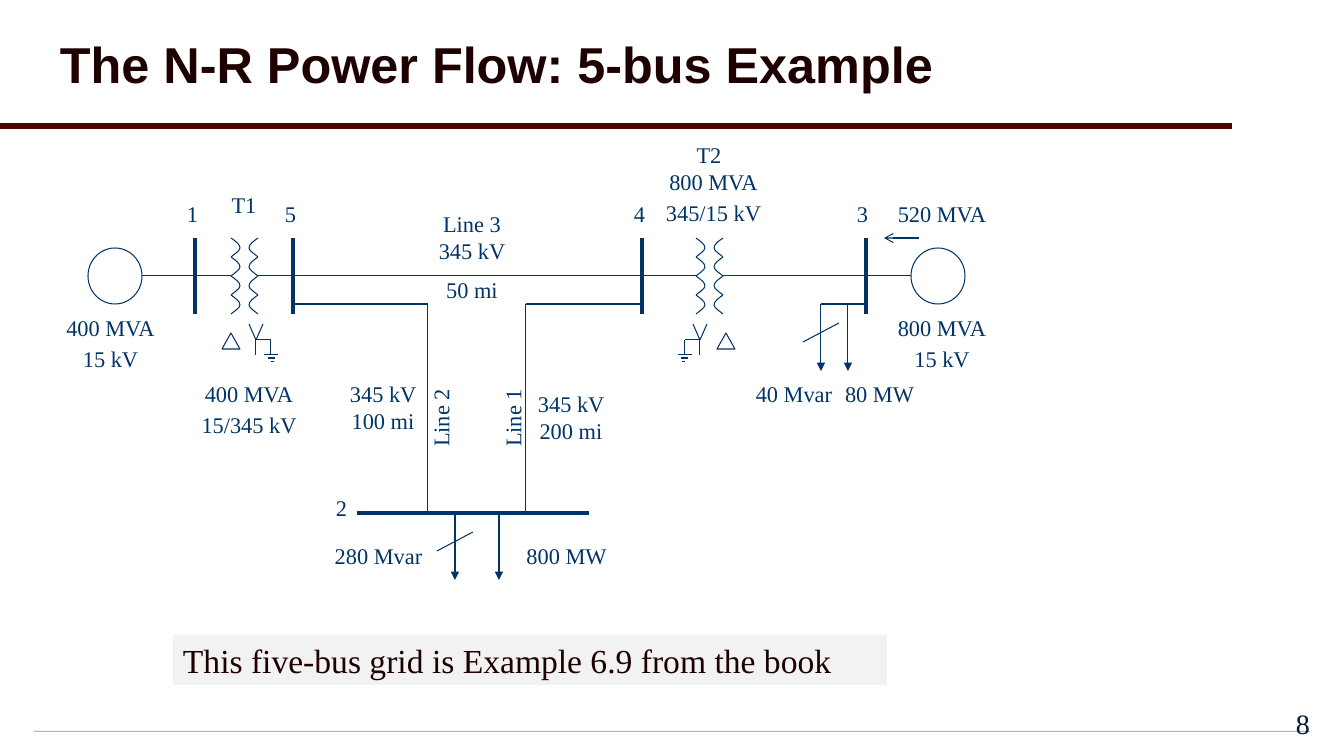
from dataclasses import dataclass

import pptx
import pptx.dml.color
import pptx.enum.shapes
import pptx.enum.text
import pptx.oxml
import pptx.oxml.ns
import pptx.shapes.autoshape
import pptx.slide
import pptx.util

RGBColor = pptx.dml.color.RGBColor
MSO_SHAPE = pptx.enum.shapes.MSO_SHAPE
PP_ALIGN = pptx.enum.text.PP_ALIGN
MSO_ANCHOR = pptx.enum.text.MSO_ANCHOR

PX_PER_INCH = 100.8
NAVY = RGBColor(0x00, 0x33, 0x66)
DARK_NAVY = RGBColor(0x00, 0x19, 0x33)
MAROON = RGBColor(0x50, 0x00, 0x00)
DARK_MAROON = RGBColor(0x1E, 0x00, 0x00)
LIGHT_GREY = RGBColor(0xF2, 0xF2, 0xF2)
RULE_GREY = RGBColor(0xB2, 0xB2, 0xB2)

WIRE_PT = 0.75
BUS_PT = 3
BUS_TOP, MAIN_Y, BRANCH_Y, BUS_BOTTOM = 238, 276, 304, 314
BUS_1, BUS_5, BUS_4, BUS_3 = 195, 293, 642, 866
BUS_2_Y = 513
HUMP_HEIGHT, HUMPS = 19, 4
HUMP_CURVE = ((0, 0), (4, 3), (9, 6), (9, 10), (9, 13), (2, 17), (0, HUMP_HEIGHT))


@dataclass(frozen=True)
class Wire:
    x1: int
    y1: int
    x2: int
    y2: int
    weight: float = WIRE_PT
    color: RGBColor = NAVY
    arrowhead: str = ""


@dataclass(frozen=True)
class Label:
    left: int
    top: int
    width: int
    height: int
    lines: tuple[str, ...]
    rotation: int = 0
    size: int = 16
    font: str = "Times New Roman"
    color: RGBColor = NAVY
    bold: bool = False
    align: PP_ALIGN = PP_ALIGN.CENTER
    anchor: MSO_ANCHOR = MSO_ANCHOR.TOP
    margins: tuple[int, int] = (0, 0)
    line_spacing: float = 1.0
    fill: RGBColor | None = None


@dataclass(frozen=True)
class Transformer:
    left_coil: int
    right_coil: int
    delta_left: int
    wye_x: int
    ground_side: int


@dataclass(frozen=True)
class Load:
    reactive_x: int
    real_x: int
    top: int


TRANSFORMERS = (
    Transformer(231, 258, 222, 256, 1),
    Transformer(696, 723, 717, 700, -1),
)
LOADS = (Load(455, 499, BUS_2_Y), Load(821, 848, BRANCH_Y))
GENERATOR_LEFTS = (88, 911)

WIRES = (
    Wire(142, MAIN_Y, BUS_1, MAIN_Y),
    Wire(BUS_1, MAIN_Y, 231, MAIN_Y),
    Wire(258, MAIN_Y, BUS_5, MAIN_Y),
    Wire(BUS_5, MAIN_Y, 651, MAIN_Y),
    Wire(651, MAIN_Y, 696, MAIN_Y),
    Wire(723, MAIN_Y, BUS_3, MAIN_Y),
    Wire(BUS_3, MAIN_Y, 911, MAIN_Y),
    Wire(BUS_5, BRANCH_Y, 428, BRANCH_Y),
    Wire(428, BRANCH_Y, 428, BUS_2_Y),
    Wire(526, BRANCH_Y, BUS_4, BRANCH_Y),
    Wire(526, BRANCH_Y, 526, BUS_2_Y),
    Wire(821, BRANCH_Y, BUS_3, BRANCH_Y),
    Wire(919, BUS_TOP, 884, BUS_TOP, arrowhead="arrow"),
    *(Wire(x, BUS_TOP, x, BUS_BOTTOM, BUS_PT) for x in (BUS_1, BUS_5, BUS_4, BUS_3)),
    Wire(357, BUS_2_Y, 589, BUS_2_Y, BUS_PT),
)

LABELS = (
    Label(61, 314, 99, 60, ("400 MVA", "15 kV")),
    Label(196, 380, 106, 60, ("400 MVA", "15/345 kV")),
    Label(231, 191, 26, 30, ("T1",)),
    Label(696, 141, 26, 30, ("T2",)),
    Label(660, 168, 107, 60, ("800 MVA", "345/15 kV")),
    Label(893, 314, 98, 60, ("800 MVA", "15 kV")),
    Label(893, 200, 98, 30, ("520 MVA",)),
    Label(839, 380, 81, 30, ("80 MW",)),
    Label(749, 380, 90, 30, ("40 Mvar",)),
    Label(329, 542, 99, 30, ("280 Mvar",)),
    Label(517, 542, 99, 30, ("800 MW",)),
    Label(436, 210, 72, 60, ("Line 3 345 kV",)),
    Label(403, 404, 76, 28, ("Line 2",), rotation=270),
    Label(475, 404, 76, 28, ("Line 1",), rotation=270),
    Label(347, 380, 72, 60, ("345 kV 100 mi",)),
    Label(535, 390, 72, 60, ("345 kV 200 mi",)),
    Label(436, 276, 72, 30, ("50 mi",)),
    Label(186, 200, 13, 30, ("1",)),
    Label(633, 200, 13, 30, ("4",)),
    Label(856, 200, 13, 30, ("3",)),
    Label(335, 494, 13, 30, ("2",)),
    Label(284, 200, 13, 30, ("5",)),
)
TITLE = Label(50, 8, 1232, 118, ("The N-R Power Flow: 5-bus Example",), size=36,
              font="Arial", color=DARK_MAROON, bold=True, align=PP_ALIGN.LEFT,
              anchor=MSO_ANCHOR.MIDDLE, margins=(10, 5), line_spacing=0.9)
NOTE = Label(173, 635, 714, 50, ("This five-bus grid is Example 6.9 from the book",),
             size=24, color=DARK_MAROON, align=PP_ALIGN.LEFT, margins=(10, 5),
             fill=LIGHT_GREY)
PAGE_NUMBER = Label(1252, 698, 68, 50, ("8",), size=20, color=DARK_NAVY,
                    align=PP_ALIGN.RIGHT, anchor=MSO_ANCHOR.MIDDLE, margins=(10, 5))


def px(length: int) -> pptx.util.Emu:
    return pptx.util.Inches(length / PX_PER_INCH)


def draw_wire(slide: pptx.slide.Slide, wire: Wire) -> None:
    connector = slide.shapes.add_connector(
        pptx.enum.shapes.MSO_CONNECTOR.STRAIGHT,
        px(wire.x1), px(wire.y1), px(wire.x2), px(wire.y2))
    connector.line.color.rgb = wire.color
    connector.line.width = pptx.util.Pt(wire.weight)
    properties = connector.element.spPr
    if wire.arrowhead:
        outline = properties.find(pptx.oxml.ns.qn("a:ln"))
        outline.append(pptx.oxml.parse_xml(
            f'<a:tailEnd {pptx.oxml.ns.nsdecls("a")} type="{wire.arrowhead}"/>'))
    properties.append(pptx.oxml.parse_xml(f'<a:effectLst {pptx.oxml.ns.nsdecls("a")}/>'))


def draw_label(slide: pptx.slide.Slide, label: Label) -> None:
    box = slide.shapes.add_textbox(
        px(label.left), px(label.top), px(label.width), px(label.height))
    box.rotation = label.rotation
    if label.fill is not None:
        box.fill.solid()
        box.fill.fore_color.rgb = label.fill
    frame = box.text_frame
    frame.word_wrap = True
    frame.vertical_anchor = label.anchor
    frame.margin_left = frame.margin_right = px(label.margins[0])
    frame.margin_top = frame.margin_bottom = px(label.margins[1])
    frame.text = "\n".join(label.lines)
    for index, paragraph in enumerate(frame.paragraphs):
        paragraph.alignment = label.align
        paragraph.line_spacing = label.line_spacing
        if index:
            paragraph.space_before = pptx.util.Pt(label.size * 0.2)
        paragraph.font.name = label.font
        paragraph.font.size = pptx.util.Pt(label.size)
        paragraph.font.bold = label.bold
        paragraph.font.color.rgb = label.color


def outline_only(shape: pptx.shapes.autoshape.Shape) -> None:
    shape.shadow.inherit = False
    shape.fill.background()
    shape.line.color.rgb = NAVY
    shape.line.width = pptx.util.Pt(WIRE_PT)


def bend(shape: pptx.shapes.autoshape.Shape) -> None:
    """Turn each three line segments into one cubic curve through their points."""
    segments = list(shape.element.iter(pptx.oxml.ns.qn("a:lnTo")))
    for index, segment in enumerate(segments):
        if index % 3 == 0:
            curve = pptx.oxml.parse_xml(f'<a:cubicBezTo {pptx.oxml.ns.nsdecls("a")}/>')
            segment.addprevious(curve)
        curve.append(segment[0])
        segment.getparent().remove(segment)


def draw_coil(slide: pptx.slide.Slide, x: int, side: int) -> None:
    """Draw a column of humps that bulge to the right (side 1) or left (side -1)."""
    for hump in range(HUMPS):
        top = BUS_TOP + hump * HUMP_HEIGHT
        start, *controls = [(px(x + side * dx), px(top + dy)) for dx, dy in HUMP_CURVE]
        builder = slide.shapes.build_freeform(*start)
        builder.add_line_segments(controls, close=False)
        winding = builder.convert_to_shape()
        bend(winding)
        outline_only(winding)


def draw_transformer(slide: pptx.slide.Slide, transformer: Transformer) -> None:
    """Draw both coils, with the delta and the grounded wye below them."""
    draw_coil(slide, transformer.left_coil, 1)
    draw_coil(slide, transformer.right_coil, -1)
    outline_only(slide.shapes.add_shape(
        MSO_SHAPE.ISOSCELES_TRIANGLE, px(transformer.delta_left), px(333), px(18), px(16)))
    wye_strokes = ((-7, 324, 0, 340), (0, 340, 7, 324), (0, 340, 0, 355),
                   (0, 340, 15, 340), (15, 340, 15, 355),
                   (8, 355, 22, 355), (12, 358, 19, 358), (15, 362, 18, 362))
    x, side = transformer.wye_x, transformer.ground_side
    for dx1, y1, dx2, y2 in wye_strokes:
        draw_wire(slide, Wire(x + side * dx1, y1, x + side * dx2, y2))


def draw_load(slide: pptx.slide.Slide, load: Load) -> None:
    """Draw the two load arrows, with a slash through the reactive one."""
    for x in (load.reactive_x, load.real_x):
        draw_wire(slide, Wire(x, load.top, x, load.top + 67, arrowhead="triangle"))
    draw_wire(slide, Wire(load.reactive_x - 18, load.top + 38,
                          load.reactive_x + 18, load.top + 19))


def draw_footer_rule(slide: pptx.slide.Slide) -> None:
    rule = slide.shapes.add_shape(MSO_SHAPE.RECTANGLE, px(34), px(731), px(1276), px(1))
    rule.shadow.inherit = False
    rule.line.fill.background()
    rule.fill.solid()
    rule.fill.fore_color.rgb = RULE_GREY


def main() -> None:
    deck = pptx.Presentation()
    deck.slide_width, deck.slide_height = px(1344), px(756)
    slide = deck.slides.add_slide(deck.slide_layouts[6])
    draw_footer_rule(slide)
    draw_wire(slide, Wire(0, 126, 1232, 126, 4, MAROON))
    draw_label(slide, TITLE)
    for left in GENERATOR_LEFTS:
        outline_only(slide.shapes.add_shape(
            MSO_SHAPE.OVAL, px(left), px(248), px(54), px(56)))
    for transformer in TRANSFORMERS:
        draw_transformer(slide, transformer)
    for wire in WIRES:
        draw_wire(slide, wire)
    for load in LOADS:
        draw_load(slide, load)
    for label in (*LABELS, NOTE, PAGE_NUMBER):
        draw_label(slide, label)
    deck.save("out.pptx")


if __name__ == "__main__":
    main()
